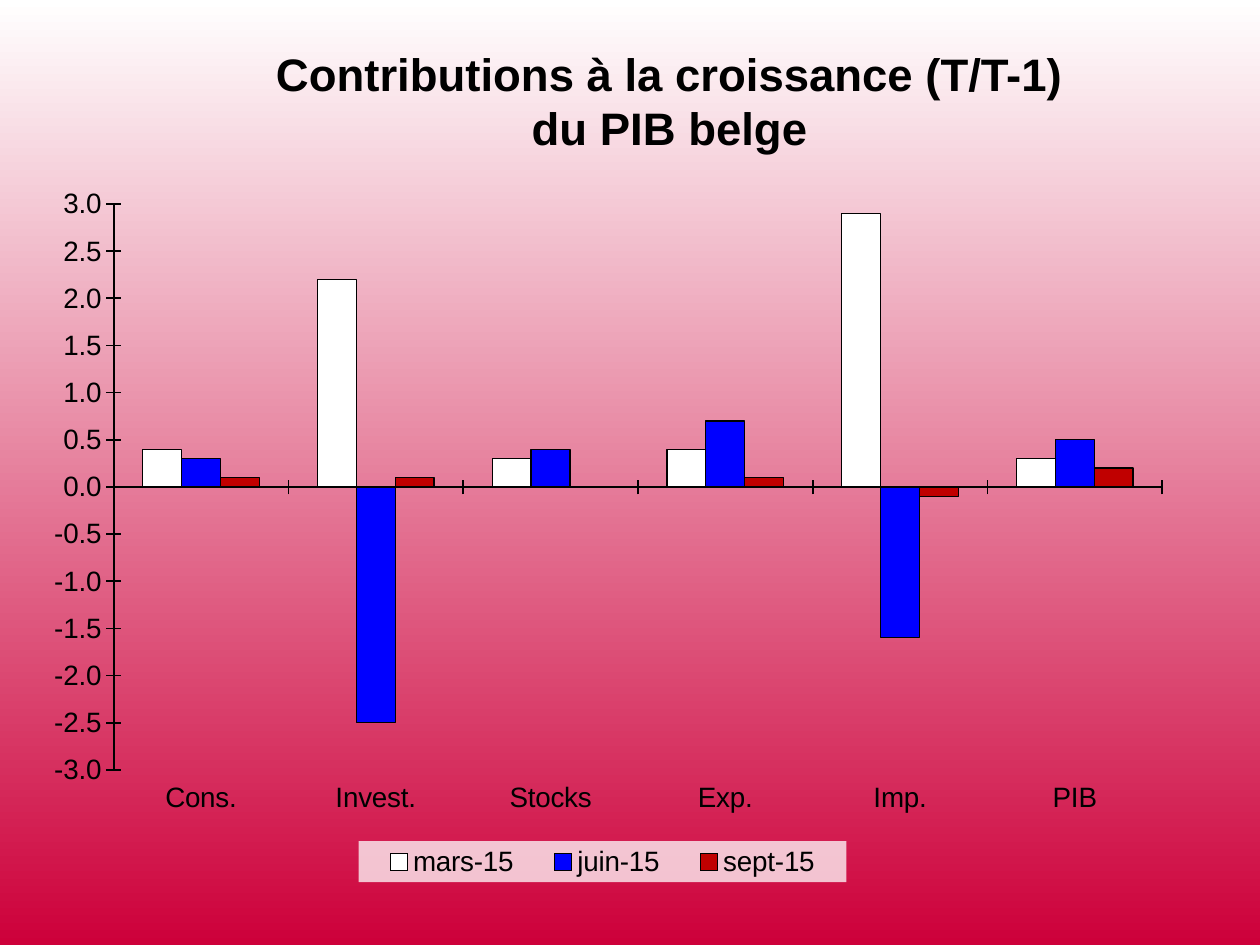
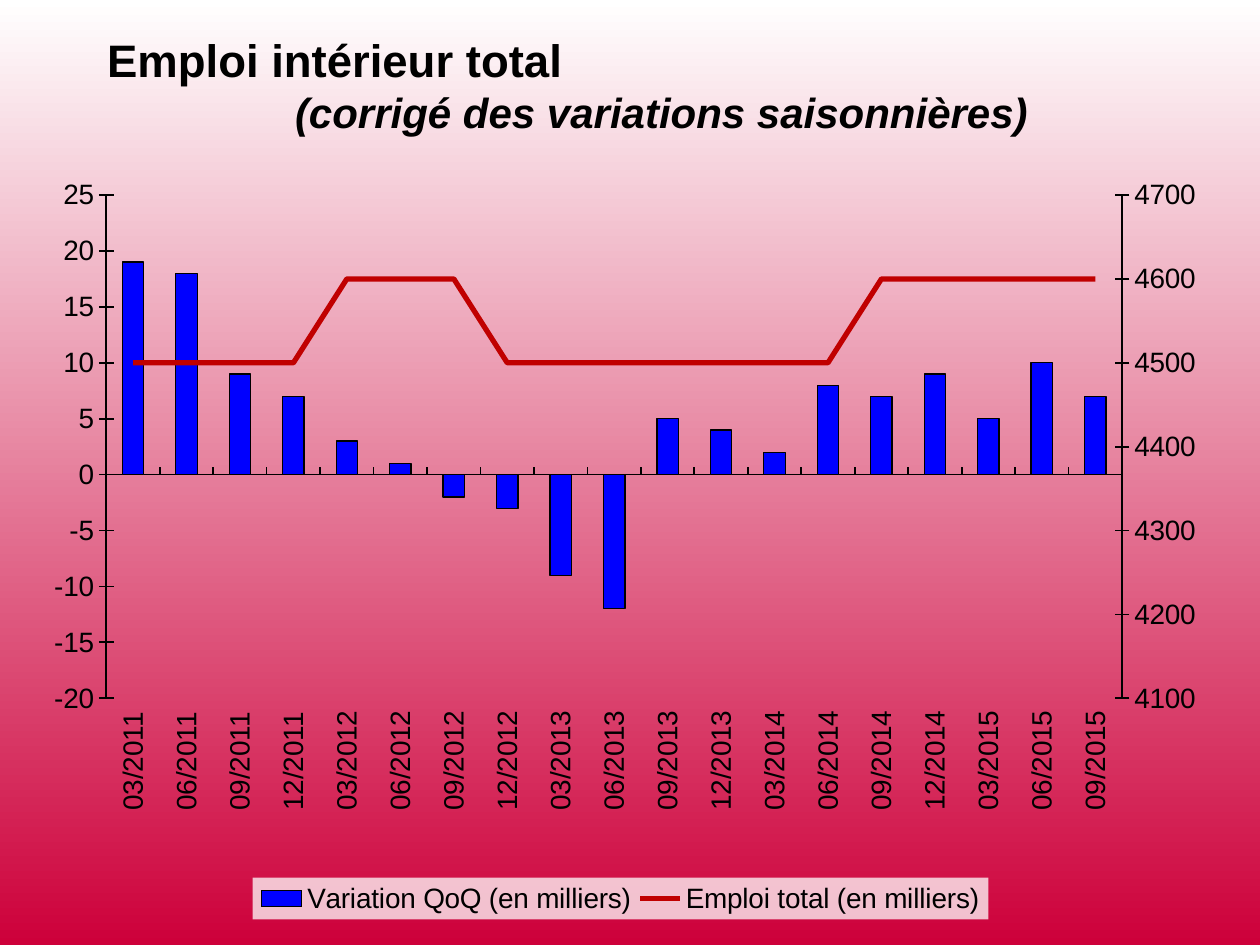
from copy import deepcopy

from pptx import Presentation
from pptx.chart.data import CategoryChartData
from pptx.dml.color import RGBColor
from pptx.enum.chart import XL_CHART_TYPE, XL_LEGEND_POSITION, XL_TICK_LABEL_POSITION, XL_TICK_MARK
from pptx.enum.text import MSO_ANCHOR, PP_ALIGN
from pptx.oxml import parse_xml
from pptx.oxml.ns import nsdecls
from pptx.util import Inches, Pt

COLUMNS = XL_CHART_TYPE.COLUMN_CLUSTERED
BOTTOM = XL_LEGEND_POSITION.BOTTOM
LOW = XL_TICK_LABEL_POSITION.LOW
CROSS, INSIDE, NO_TICK = XL_TICK_MARK.CROSS, XL_TICK_MARK.INSIDE, XL_TICK_MARK.NONE
MIDDLE = MSO_ANCHOR.MIDDLE
LEFT, CENTER = PP_ALIGN.LEFT, PP_ALIGN.CENTER

WIDTH, HEIGHT = Inches(10), Inches(7.5)
FONT = "Arial"
BLACK, WHITE, BLUE, RED, CRIMSON = "000000", "FFFFFF", "0000FF", "C00000", "CD003A"
TITLE_ONLY = 5


def color(value):
    return RGBColor.from_string(value)


def percent_box(left, top, width, height):
    return (round(WIDTH * left / 100), round(HEIGHT * top / 100),
            round(WIDTH * width / 100), round(HEIGHT * height / 100))


def style_font(font, size):
    font.name = FONT
    font.size = Pt(size)
    font.color.rgb = color(BLACK)


def style_line(line, value, width):
    line.color.rgb = color(value)
    line.width = Pt(width)


def paint_background(master):
    fill = master.background.fill
    fill.gradient()
    fill.gradient_angle = 270
    for stop, value, position in zip(fill.gradient_stops, (WHITE, CRIMSON), (0, 1)):
        stop.color.rgb = color(value)
        stop.position = position


def add_title(page, box, lines):
    title = page.shapes.title
    title.left, title.top, title.width, title.height = box
    frame = title.text_frame
    frame.vertical_anchor = MIDDLE
    frame.word_wrap = True
    frame.text = "\n".join(text for text, *_ in lines)
    for para, (_, size, alignment, italic) in zip(frame.paragraphs, lines):
        para.alignment = alignment
        style_font(para.font, size)
        para.font.bold = True
        para.font.italic = italic


def manual_layout(box, inner=False):
    target = '<c:layoutTarget val="inner"/>' if inner else ""
    modes = '<c:xMode val="edge"/><c:yMode val="edge"/>'
    sizes = "".join(f'<c:{name} val="{share / 100:.4f}"/>' for name, share in zip("xywh", box))
    return parse_xml(f'<c:layout {nsdecls("c")}><c:manualLayout>{target}{modes}{sizes}'
                     '</c:manualLayout></c:layout>')


def remove_layout(element):
    for layout in element.xpath("c:layout"):
        element.remove(layout)


def style_legend(chart, box):
    chart.has_legend = True
    chart.legend.position = BOTTOM
    chart.legend.include_in_layout = False
    element = chart.legend._element
    remove_layout(element)
    element.xpath("c:legendPos")[0].addnext(manual_layout(box))
    element.xpath("c:overlay")[0].addnext(parse_xml(
        f'<c:spPr {nsdecls("c", "a")}><a:solidFill><a:srgbClr val="{WHITE}">'
        '<a:alpha val="75000"/></a:srgbClr></a:solidFill><a:ln><a:noFill/></a:ln></c:spPr>'))


def style_axis(axis, tick):
    axis.has_major_gridlines = False
    axis.major_tick_mark = tick
    axis.minor_tick_mark = NO_TICK
    style_line(axis.format.line, BLACK, 1)
    style_font(axis.tick_labels.font, 16)


def add_column_chart(page, box, categories, series, scale, number_format, tick, plot_box, legend_box):
    data = CategoryChartData(number_format=number_format)
    data.categories = categories
    for name, values, _ in series:
        data.add_series(name, values)
    chart = page.shapes.add_chart(COLUMNS, *box, data).chart
    chart.has_title = False
    style_font(chart.font, 16)

    style_axis(chart.category_axis, tick)
    chart.category_axis.tick_label_position = LOW
    values_axis = chart.value_axis
    style_axis(values_axis, CROSS)
    values_axis.minimum_scale, values_axis.maximum_scale, values_axis.major_unit = scale
    values_axis.tick_labels.number_format = number_format
    values_axis.tick_labels.number_format_is_linked = False

    plot = chart.plots[0]
    plot.vary_by_categories = False
    plot.gap_width = 150
    plot.overlap = 0
    for columns, (_, _, value) in zip(plot.series, series):
        columns.invert_if_negative = False
        columns.format.fill.solid()
        columns.format.fill.fore_color.rgb = color(value)
        style_line(columns.format.line, BLACK, 0.75)

    plot_area = chart._chartSpace.xpath("c:chart/c:plotArea")[0]
    remove_layout(plot_area)
    plot_area.insert(0, manual_layout(plot_box, inner=True))
    style_legend(chart, legend_box)
    return chart


def set_values(element, values):
    for query, value in values.items():
        element.xpath(query)[0].set("val", str(value))


def move_last_series_to_right_axis(chart, value, scale):
    last = chart.plots[0].series[-1]
    last.format.fill.background()
    style_line(last.format.line, value, 3)
    series = last._element
    for flag in series.xpath("c:invertIfNegative"):
        series.remove(flag)
    for fill in series.xpath("c:spPr/a:noFill"):
        fill.getparent().remove(fill)
    series.xpath("c:spPr")[0].addnext(
        parse_xml(f'<c:marker {nsdecls("c")}><c:symbol val="none"/></c:marker>'))
    series.append(parse_xml(f'<c:smooth {nsdecls("c")} val="0"/>'))

    category_id, value_id = 50010, 50020
    line_chart = parse_xml(
        f'<c:lineChart {nsdecls("c")}><c:grouping val="standard"/><c:varyColors val="0"/>'
        f'<c:marker val="1"/><c:axId val="{category_id}"/><c:axId val="{value_id}"/></c:lineChart>')
    line_chart.insert(2, series)
    plot_area = chart._chartSpace.xpath("c:chart/c:plotArea")[0]
    plot_area.xpath("c:barChart")[0].addnext(line_chart)

    category_axis = chart.category_axis._element
    value_axis = chart.value_axis._element
    right_axis, hidden_axis = deepcopy(value_axis), deepcopy(category_axis)
    minimum, maximum, step = scale
    set_values(right_axis, {
        "c:axId": value_id, "c:crossAx": category_id, "c:axPos": "r", "c:crosses": "max",
        "c:scaling/c:min": minimum, "c:scaling/c:max": maximum, "c:majorUnit": step})
    set_values(hidden_axis, {"c:axId": category_id, "c:crossAx": value_id, "c:delete": 1})
    value_axis.addnext(right_axis)
    right_axis.addnext(hidden_axis)


def build_growth_page(page):
    add_title(page, percent_box(19.3, 4.8, 67.7, 11.6),
              [("Contributions à la croissance (T/T-1) du PIB belge", 26, CENTER, False)])
    add_column_chart(
        page, percent_box(4.3, 18.4, 90.6, 76.1),
        ["Cons.", "Invest.", "Stocks", "Exp.", "Imp.", "PIB"],
        [("mars-15", (0.4, 2.2, 0.3, 0.4, 2.9, 0.3), WHITE),
         ("juin-15", (0.3, -2.5, 0.4, 0.7, -1.6, 0.5), BLUE),
         ("sept-15", (0.1, 0.1, 0, 0.1, -0.1, 0.2), RED)],
        scale=(-3, 3, 0.5), number_format="0.0", tick=CROSS,
        plot_box=(4.6, 4.2, 92.45, 78.7), legend_box=(26.2, 92.8, 43, 5.7))


def build_employment_page(page):
    add_title(page, percent_box(7.5, 0.6, 90, 16.67),
              [("Emploi intérieur total", 26, LEFT, False),
               ("(corrigé des variations saisonnières)", 24, CENTER, True)])
    quarters = [f"{month:02}/{year}" for year in range(2011, 2016) for month in (3, 6, 9, 12)][:-1]
    variation = (19, 18, 9, 7, 3, 1, -2, -3, -9, -12, 5, 4, 2, 8, 7, 9, 5, 10, 7)
    employment = [4500] * 4 + [4600] * 3 + [4500] * 7 + [4600] * 5
    chart = add_column_chart(
        page, percent_box(4.3, 18.4, 90.6, 78.9), quarters,
        [("Variation QoQ (en milliers)", variation, BLUE),
         ("Emploi total (en milliers)", employment, RED)],
        scale=(-20, 25, 5), number_format="0", tick=INSIDE,
        plot_box=(4.55, 2.85, 89.2, 67.5), legend_box=(17.4, 94.4, 64.6, 5.6))
    chart.category_axis._element.xpath("c:txPr/a:bodyPr")[0].set("rot", "-5400000")
    move_last_series_to_right_axis(chart, RED, (4100, 4700, 100))


def main():
    deck = Presentation()
    deck.slide_width, deck.slide_height = WIDTH, HEIGHT
    paint_background(deck.slide_master)
    for build in (build_growth_page, build_employment_page):
        build(deck.slides.add_slide(deck.slide_layouts[TITLE_ONLY]))
    deck.save("out.pptx")


if __name__ == "__main__":
    main()
